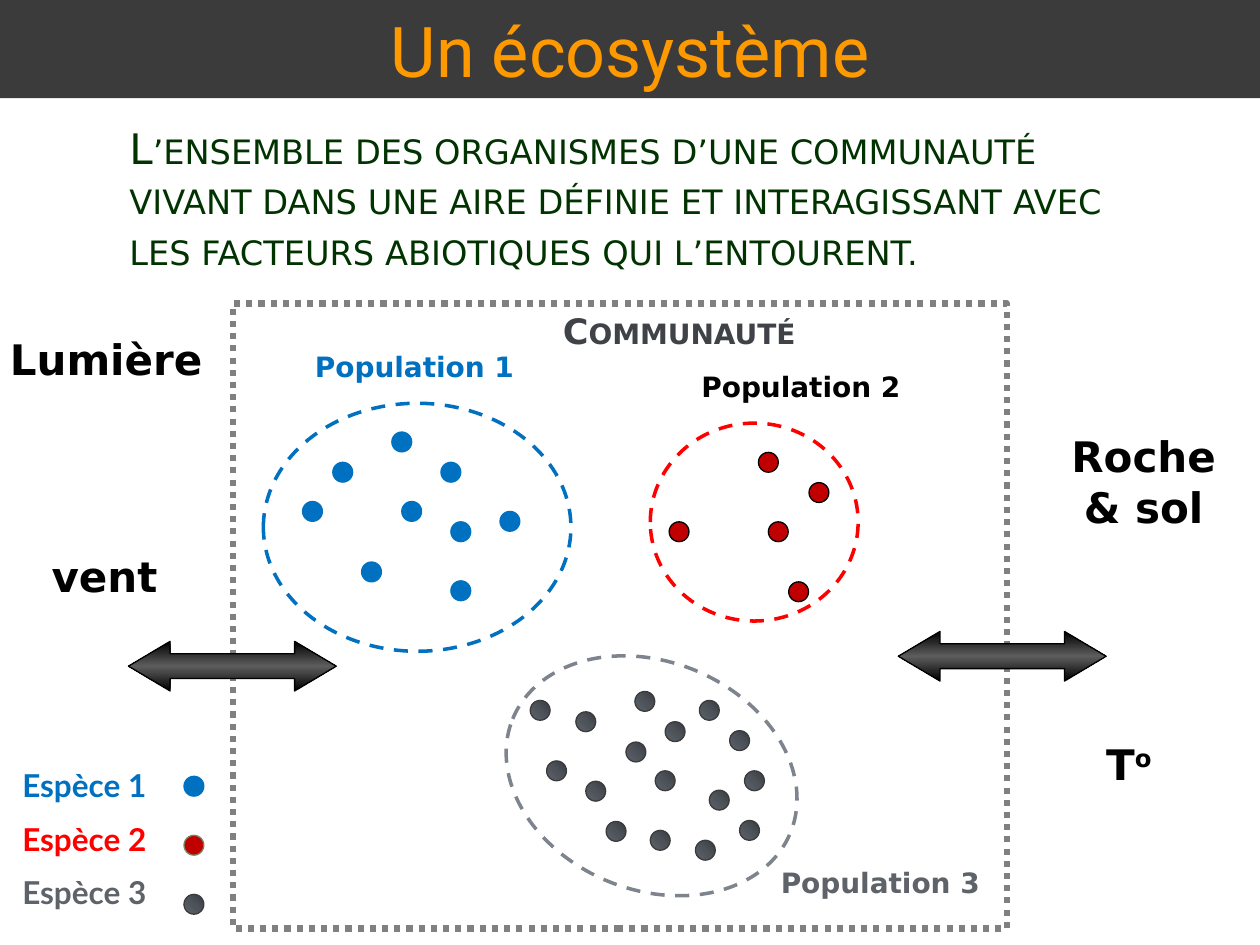
from pptx import Presentation
from pptx import util as u
from pptx.dml.color import RGBColor
from pptx.enum import dml, shapes, text
from pptx.oxml import parse_xml
from pptx.oxml.ns import nsdecls

BLUE = RGBColor(0x00, 0x70, 0xC0)
RED = RGBColor(0xFF, 0x00, 0x00)
DARK_RED = RGBColor(0xC0, 0x00, 0x00)
OLIVE = RGBColor(0x74, 0x85, 0x60)
BLACK = RGBColor(0x00, 0x00, 0x00)
CHARCOAL = RGBColor(0x3B, 0x3B, 0x3B)
SLATE = RGBColor(0x5E, 0x63, 0x6A)
DIM = RGBColor(0x3F, 0x42, 0x47)
STEEL = RGBColor(0x7E, 0x84, 0x8D)
GRAY = RGBColor(0x80, 0x80, 0x80)
GREEN = RGBColor(0x00, 0x33, 0x00)
ORANGE = RGBColor(0xFF, 0x99, 0x00)

# Gradients: three evenly spaced stops, then the angle
BALL = ([RGBColor(0x37, 0x3A, 0x40), RGBColor(0x4E, 0x53, 0x5A),
         RGBColor(0x5D, 0x63, 0x6B)], 135)
METAL = ([BLACK, RGBColor(0x5D, 0x5D, 0x5D), BLACK], 90)

SANS = "DejaVu Sans"
KIND = shapes.MSO_SHAPE
DASH = dml.MSO_LINE
DOT = 0.4

# Top left corners of the dots of each population, in cm
POP1 = [(8.89, 9.32), (10.08, 10.31), (9.09, 11.71), (8.1, 10.11), (6.1, 10.11),
        (7.9, 8.71), (7.29, 11.33), (9.09, 10.52), (6.71, 9.32)]
POP2 = [(16.31, 9.73), (15.9, 11.73), (15.49, 10.52), (13.49, 10.52), (15.29, 9.12)]
POP3 = [(10.69, 14.12), (15.01, 15.54), (14.02, 16.94), (13.11, 16.74),
        (11.02, 15.34), (12.8, 13.94), (12.22, 16.56), (12.62, 14.96),
        (11.81, 15.75), (11.61, 14.35), (14.71, 14.73), (13.41, 14.55),
        (13.21, 15.54), (14.91, 16.54), (14.1, 14.12), (14.3, 15.93)]


def blend(shape, grad):
    """Fill a shape with a linear gradient."""
    tones, angle = grad
    stops = "".join(f'<a:gs pos="{i * 50000}"><a:srgbClr val="{tone}"/></a:gs>'
                    for i, tone in enumerate(tones))
    fill = parse_xml(f'<a:gradFill {nsdecls("a")}><a:gsLst>{stops}</a:gsLst>'
                     f'<a:lin ang="{angle * 60000}" scaled="0"/></a:gradFill>')
    shape._element.spPr.find("{*}prstGeom").addnext(fill)


def form(slide, kind, box, fill=None, line=None, width=0.75, dash=None):
    """Add a preset shape; fill is a colour, a gradient or None."""
    shape = slide.shapes.add_shape(kind, *map(u.Cm, box))
    shape.shadow.inherit = False
    if isinstance(fill, tuple) and not isinstance(fill, RGBColor):
        blend(shape, fill)
    elif fill is None:
        shape.fill.background()
    else:
        shape.fill.solid()
        shape.fill.fore_color.rgb = fill
    if line is None:
        shape.line.fill.background()
    else:
        shape.line.color.rgb = line
        shape.line.width = u.Pt(width)
        if dash:
            shape.line.dash_style = dash
    return shape


def dot(slide, x, y, fill, line):
    form(slide, KIND.OVAL, (x, y, DOT, DOT), fill, line)


def ring(slide, box, line, turn=0):
    shape = form(slide, KIND.OVAL, box, None, line, 2, DASH.DASH)
    shape.rotation = turn


def arrow(slide, x, y):
    shape = form(slide, KIND.LEFT_RIGHT_ARROW, (x, y, 4.19, 1.0), METAL, BLACK)
    shape.adjustments[0] = 0.5
    shape.adjustments[1] = 0.84


def write(para, words, size, color, font=SANS, bold=True, **marks):
    """Add one run; marks are extra run attributes such as cap."""
    run = para.add_run()
    run.text = words
    run.font.size = u.Pt(size)
    run.font.name = font
    run.font.bold = bold
    run.font.color.rgb = color
    for key, value in marks.items():
        run.font._element.set(key, value)


def area(slide, box):
    """Add a wrapping text box and return its frame."""
    frame = slide.shapes.add_textbox(*map(u.Cm, box)).text_frame
    frame.word_wrap = True
    return frame


def label(slide, box, words, size, color, **more):
    para = area(slide, box).paragraphs[0]
    write(para, words, size, color, **more)
    return para


def legend(slide):
    frame = area(slide, (0.2, 15.32, 4.09, 3.3))
    rows = [(BLUE, BLUE, BLUE), (RED, DARK_RED, OLIVE), (SLATE, BALL, CHARCOAL)]
    for i, (color, fill, line) in enumerate(rows):
        para = frame.add_paragraph() if i else frame.paragraphs[0]
        if i:
            para.space_before = u.Pt(9)
        write(para, f"Espèce {i + 1}", 18, color, "Lato")
        dot(slide, 3.71, 15.65 + 1.19 * i, fill, line)


def main():
    deck = Presentation()
    deck.slide_width, deck.slide_height = u.Cm(25.4), u.Cm(19.05)
    slide = deck.slides.add_slide(deck.slide_layouts[6])

    # Community frame
    form(slide, KIND.RECTANGLE, (4.7, 6.12, 15.6, 12.6), None, GRAY, 3.5,
         DASH.ROUND_DOT)

    # Populations: dots, outline and name
    groups = [
        (POP1, BLUE, BLUE, (5.31, 8.13, 6.2, 5.0), BLUE, 0, (6.1, 6.93), BLUE),
        (POP2, DARK_RED, BLACK, (13.11, 8.53, 4.19, 3.99), RED, 0,
         (13.89, 7.32), BLACK),
        (POP3, BALL, CHARCOAL, (10.11, 13.34, 6.05, 4.6), STEEL, 22.3,
         (15.49, 17.32), SLATE),
    ]
    for i, (spots, fill, line, box, edge, turn, spot, color) in enumerate(groups, 1):
        for x, y in spots:
            dot(slide, x, y, fill, line)
        ring(slide, box, edge, turn)
        label(slide, (*spot, 4.6, 0.94), f"Population {i}", 16, color)

    legend(slide)

    # Exchanges with the surroundings
    arrow(slide, 18.11, 12.73)
    arrow(slide, 2.59, 12.93)

    # Abiotic factors
    label(slide, (-0.05, 6.6, 4.6, 1.27), "Lumière", 24, BLACK)
    label(slide, (0.79, 10.97, 2.9, 1.27), "vent", 24, BLACK)
    rock = label(slide, (20.96, 8.56, 4.19, 2.31), "Roche & sol", 24, BLACK)
    rock.alignment = text.PP_ALIGN.CENTER
    heat = label(slide, (22.05, 14.76, 2.01, 1.27), "T", 24, BLACK)
    write(heat, "o", 24, BLACK, baseline="30000")

    # Community name and definition
    label(slide, (11.1, 6.12, 6.2, 1.12), "Communauté", 20, DIM, cap="small")
    label(slide, (2.36, 2.34, 21.34, 3.33),
          "L’ensemble des organismes d’une communauté vivant dans une aire "
          "définie et interagissant avec les facteurs abiotiques qui l’entourent.",
          24, GREEN, bold=False, cap="small")

    # Title band
    band = form(slide, KIND.RECTANGLE, (0, 0, 25.4, 1.98), CHARCOAL)
    band.text_frame.vertical_anchor = text.MSO_ANCHOR.MIDDLE
    para = band.text_frame.paragraphs[0]
    para.alignment = text.PP_ALIGN.CENTER
    write(para, "Un écosystème", 40, ORANGE, "Roboto", False)

    deck.save("out.pptx")


if __name__ == "__main__":
    main()
